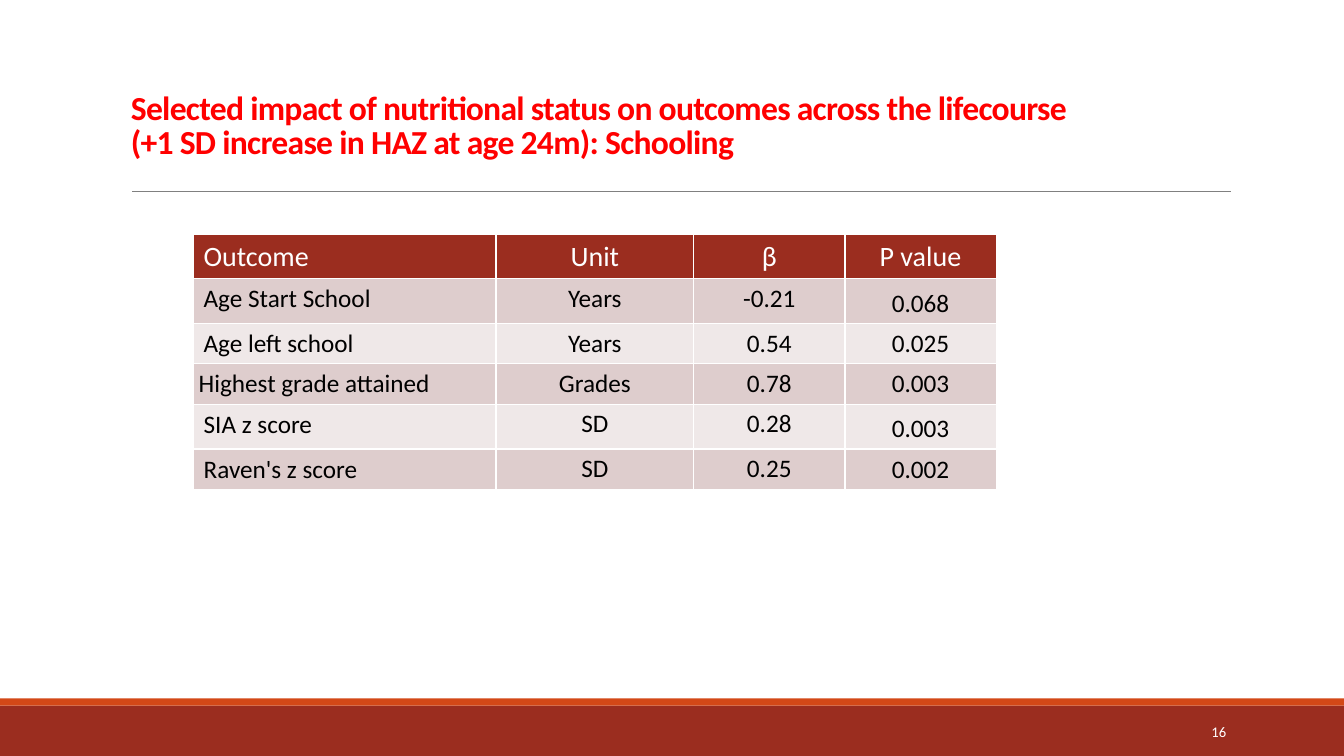
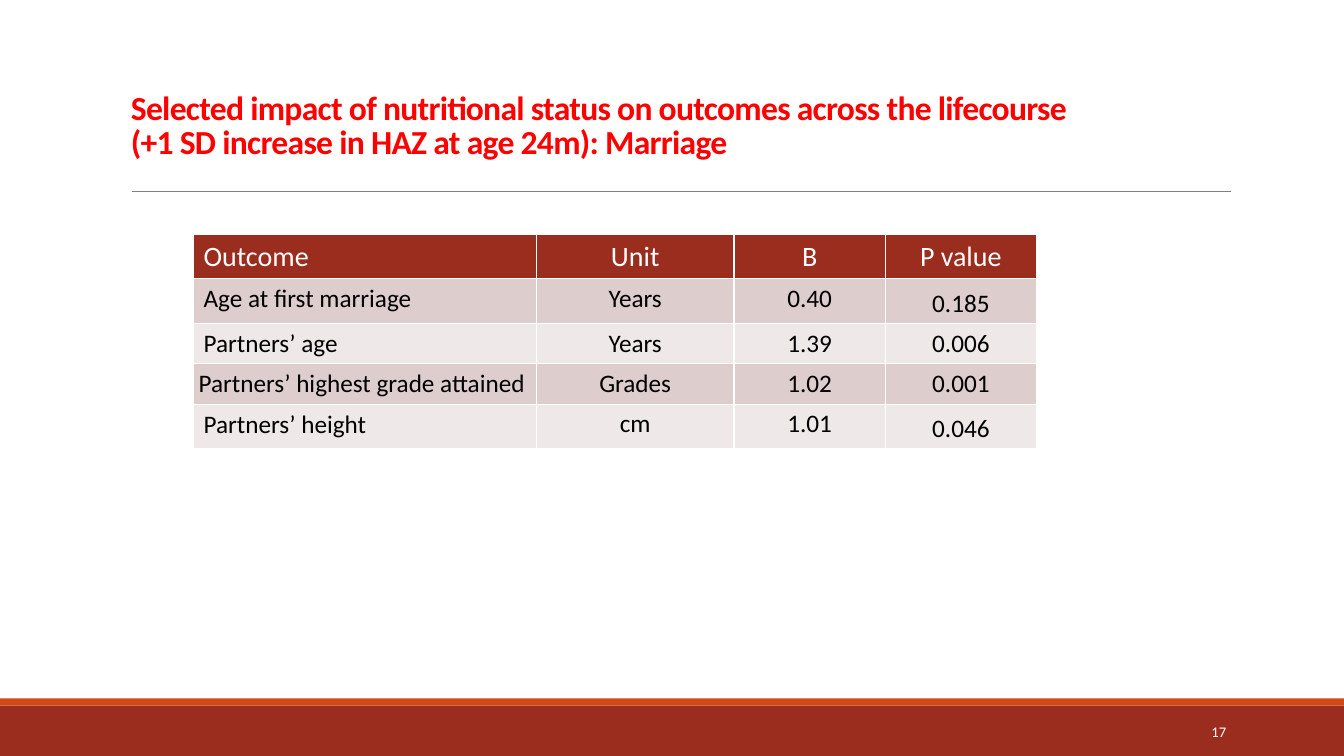
import pptx
import pptx.dml.color
import pptx.enum.shapes
import pptx.enum.text
import pptx.oxml
import pptx.oxml.ns
import pptx.util
from lxml import etree

Inches, Pt = pptx.util.Inches, pptx.util.Pt
ALIGN = pptx.enum.text.PP_ALIGN
ANCHOR = pptx.enum.text.MSO_ANCHOR

WIDTH, HEIGHT = 13.33, 7.5
FONT = "Calibri"
COLOURS = {
    "band": "9B2D1F",
    "stripe": "D34817",
    "rule": "808080",
    "title": "FF0000",
    "text": "000000",
    "white": "FFFFFF",
    "odd row": "DECDCD",
    "even row": "EFE8E8",
}

TITLE = "Selected impact of nutritional status on outcomes across the lifecourse\v(+1 SD increase in HAZ at age 24m): {}"
FIRST_NUMBER = 16
TABLES = [
    {
        "topic": "Schooling",
        "outcome width": 3,
        "rows": [
            ("Outcome", "Unit", "β", "P value"),
            ("Age Start School", "Years", "-0.21", "0.068"),
            ("Age left school", "Years", "0.54", "0.025"),
            ("Highest grade attained", "Grades", "0.78", "0.003"),
            ("SIA z score", "SD", "0.28", "0.003"),
            ("Raven's z score", "SD", "0.25", "0.002"),
        ],
    },
    {
        "topic": "Marriage",
        "outcome width": 3.4,
        "rows": [
            ("Outcome", "Unit", "Β", "P value"),
            ("Age at first marriage", "Years", "0.40", "0.185"),
            ("Partners’ age", "Years", "1.39", "0.006"),
            ("Partners’ highest grade attained", "Grades", "1.02", "0.001"),
            ("Partners’ height", "cm", "1.01", "0.046"),
        ],
    },
]

TABLE_LEFT, TABLE_TOP, ROW_HEIGHT = 1.92, 2.33, 0.4
VALUE_WIDTHS = [1.96, 1.5, 1.5]
# One letter per cell: n = normal, l = loose line spacing, t = tight margins and loose spacing
CELL_STYLES = ["nnnn", "nntl", "nttn", "tttt", "nttl", "nttn"]
LOOSE_SPACING = 1.15


def colour(name):
    return pptx.dml.color.RGBColor.from_string(COLOURS[name])


def style_font(paragraph, size, colour_name, bold=False):
    font = paragraph.font
    font.name, font.size, font.bold = FONT, Pt(size), bold
    font.color.rgb = colour(colour_name)


def add_band(slide, top, height, colour_name):
    band = slide.shapes.add_shape(
        pptx.enum.shapes.MSO_SHAPE.RECTANGLE, 0, Inches(top), Inches(WIDTH), Inches(height))
    band.shadow.inherit = False
    band.fill.solid()
    band.fill.fore_color.rgb = colour(colour_name)
    band.line.fill.background()


def add_text(slide, box, text, anchor):
    frame = slide.shapes.add_textbox(*map(Inches, box)).text_frame
    frame.word_wrap = True
    frame.vertical_anchor = anchor
    paragraph = frame.paragraphs[0]
    paragraph.text = text
    return frame, paragraph


def add_frame(slide, topic, number):
    """Draw the bands, rule, title and slide number."""
    add_band(slide, 7, 0.5, "band")
    add_band(slide, 6.93, 0.07, "stripe")

    rule = slide.shapes.add_connector(
        pptx.enum.shapes.MSO_CONNECTOR.STRAIGHT, *map(Inches, (1.31, 1.9, 12.21, 1.9)))
    rule.line.color.rgb = colour("rule")
    rule.line.width = Pt(0.5)
    etree.SubElement(rule._element.spPr, pptx.oxml.ns.qn("a:effectLst"))

    frame, title = add_text(slide, (1.2, 0.31, 11, 1.59), TITLE.format(topic), ANCHOR.BOTTOM)
    frame.margin_bottom = Inches(0.3)
    title.line_spacing = 0.85
    style_font(title, 24, "title", bold=True)
    for run in title.runs:
        run.font._element.set("spc", "-50")

    _, page = add_text(slide, (10.83, 7.06, 1.43, 0.4), str(number), ANCHOR.MIDDLE)
    page.alignment = ALIGN.RIGHT
    style_font(page, 10.5, "white")


def add_borders(cell):
    properties = cell._tc.get_or_add_tcPr()
    for side in "LRTB":
        properties.append(pptx.oxml.parse_xml(
            f'<a:ln{side} {pptx.oxml.ns.nsdecls("a")} w="{Pt(1)}"><a:solidFill>'
            f'<a:srgbClr val="{COLOURS["white"]}"/></a:solidFill></a:ln{side}>'))


def fill_cell(cell, text, row, column):
    add_borders(cell)
    cell.fill.solid()
    fill = "band" if row == 0 else "odd row" if row % 2 else "even row"
    cell.fill.fore_color.rgb = colour(fill)

    style = CELL_STYLES[row][column]
    paragraph = cell.text_frame.paragraphs[0]
    paragraph.text = text
    paragraph.alignment = ALIGN.CENTER if column else ALIGN.LEFT
    if style != "n":
        paragraph.line_spacing = LOOSE_SPACING
    if style == "t":
        cell.margin_left = cell.margin_right = Inches(0.05)
        cell.margin_top = cell.margin_bottom = 0
    style_font(paragraph, 18 if row else 20, "text" if row else "white")


def add_outcomes(slide, rows, outcome_width):
    widths = [outcome_width, *VALUE_WIDTHS]
    table = slide.shapes.add_table(
        len(rows), len(widths), Inches(TABLE_LEFT), Inches(TABLE_TOP),
        Inches(sum(widths)), Inches(ROW_HEIGHT * len(rows))).table
    for column, width in zip(table.columns, widths):
        column.width = Inches(width)
    for row, texts in enumerate(rows):
        table.rows[row].height = Inches(ROW_HEIGHT)
        for column, text in enumerate(texts):
            fill_cell(table.cell(row, column), text, row, column)


def main():
    presentation = pptx.Presentation()
    presentation.slide_width, presentation.slide_height = Inches(WIDTH), Inches(HEIGHT)
    for number, content in enumerate(TABLES, FIRST_NUMBER):
        slide = presentation.slides.add_slide(presentation.slide_layouts[6])
        add_frame(slide, content["topic"], number)
        add_outcomes(slide, content["rows"], content["outcome width"])
    presentation.save("out.pptx")


if __name__ == "__main__":
    main()
